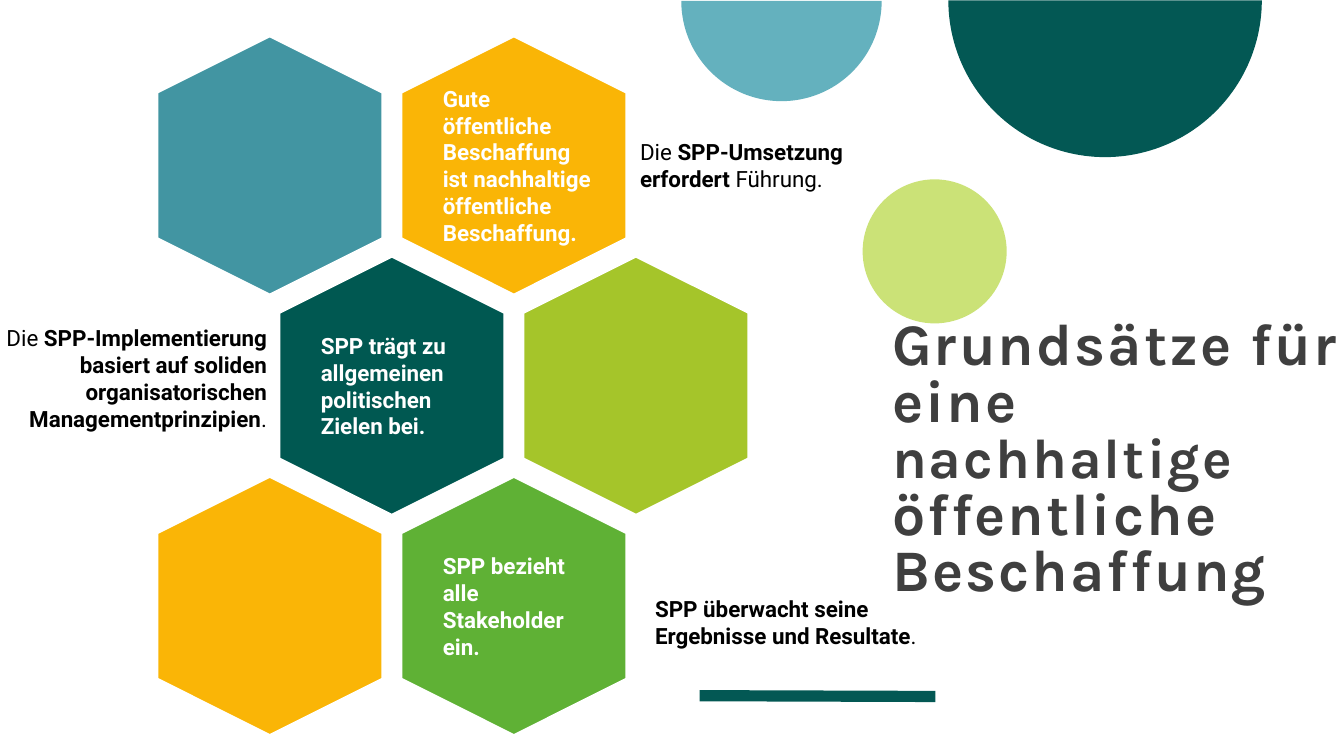
import pptx
import pptx.util
import pptx.dml.color
import pptx.enum.shapes
import pptx.enum.text
import pptx.oxml
from dataclasses import dataclass
from pptx.util import Cm

SHAPE = pptx.enum.shapes.MSO_SHAPE
ALIGN = pptx.enum.text.PP_ALIGN
ANCHOR = pptx.enum.text.MSO_ANCHOR


@dataclass(frozen=True)
class Theme:
    heading_font: str = "Karla"
    body_font: str = "Roboto"
    title_size: int = 42
    title_small_size: int = 40
    title_tracking: int = 150  # hundredths of a point
    body_size: int = 16
    white: str = "FFFFFF"
    black: str = "000000"
    grey: str = "3F3F3F"
    petrol: str = "035854"
    dark_green: str = "005851"
    blue: str = "4295A2"
    light_blue: str = "64B1BE"
    yellow: str = "FAB506"
    lime: str = "A5C52A"
    pale_lime: str = "CBE277"
    green: str = "5FB135"


def rgb(value):
    return pptx.dml.color.RGBColor.from_string(value)


class SlideBuilder:
    def __init__(self, slide, theme):
        self.slide = slide
        self.theme = theme

    def shape(self, kind, left, top, width, height, fill, outline=None):
        drawn = self.slide.shapes.add_shape(
            kind, Cm(left), Cm(top), Cm(width), Cm(height))
        drawn.shadow.inherit = False
        drawn.fill.solid()
        drawn.fill.fore_color.rgb = rgb(fill)
        if outline:
            drawn.line.color.rgb = rgb(outline)
            drawn.line.width = pptx.util.Pt(2)
        else:
            drawn.line.fill.background()
        return drawn

    def half_disc(self, left, top, diameter, fill):
        """Lower half of a circle."""
        disc = self.shape(SHAPE.PIE, left, top, diameter, diameter, fill)
        disc.adjustments[0] = 0
        disc.adjustments[1] = 108

    def hexagon(self, center_x, center_y, fill):
        """Hexagon standing on a corner."""
        length, breadth = 6.53, 5.69
        cell = self.shape(SHAPE.HEXAGON, center_x - length / 2, center_y - breadth / 2,
                          length, breadth, fill, self.theme.white)
        cell.adjustments[0] = 0.25
        cell.rotation = 90

    def rule(self, x1, y1, x2, y2, color):
        bar = self.slide.shapes.add_connector(
            pptx.enum.shapes.MSO_CONNECTOR.STRAIGHT, Cm(x1), Cm(y1), Cm(x2), Cm(y2))
        bar.line.color.rgb = rgb(color)
        bar.line.width = pptx.util.Pt(8)
        bar._element.spPr.append(pptx.oxml.parse_xml(
            '<a:effectLst xmlns:a="http://schemas.openxmlformats.org/drawingml/2006/main"/>'))

    def label(self, left, top, width, height, parts, color, align=ALIGN.LEFT):
        """Text box; parts are (text, bold) pairs."""
        frame = self.slide.shapes.add_textbox(
            Cm(left), Cm(top), Cm(width), Cm(height)).text_frame
        frame.word_wrap = True
        frame.vertical_anchor = ANCHOR.MIDDLE
        frame.margin_left = frame.margin_right = Cm(0.18)
        frame.margin_top = frame.margin_bottom = Cm(0.18)
        paragraph = frame.paragraphs[0]
        paragraph.alignment = align
        paragraph.font.name = self.theme.body_font
        paragraph.font.size = pptx.util.Pt(self.theme.body_size)
        paragraph.font.color.rgb = rgb(color)
        for text, bold in parts:
            run = paragraph.add_run()
            run.text = text
            run.font.bold = bold

    def title(self, left, top, width, height, parts):
        """Title placeholder; parts are (text, size) pairs."""
        heading = self.slide.shapes.title
        heading.left, heading.top = Cm(left), Cm(top)
        heading.width, heading.height = Cm(width), Cm(height)
        frame = heading.text_frame
        frame.word_wrap = True
        frame.auto_size = pptx.enum.text.MSO_AUTO_SIZE.NONE
        frame.vertical_anchor = ANCHOR.BOTTOM
        frame.margin_left = frame.margin_right = 0
        frame.margin_top = frame.margin_bottom = 0
        paragraph = frame.paragraphs[0]
        paragraph.alignment = ALIGN.LEFT
        paragraph.line_spacing = 0.8
        paragraph.font.name = self.theme.heading_font
        paragraph.font.bold = True
        paragraph.font.color.rgb = rgb(self.theme.grey)
        for text, size in parts:
            run = paragraph.add_run()
            run.text = text
            run.font.size = pptx.util.Pt(size)
            run.font._element.set("spc", str(self.theme.title_tracking))


def main():
    deck = pptx.Presentation()
    deck.slide_width, deck.slide_height = Cm(33.87), Cm(19.05)
    theme = Theme()
    builder = SlideBuilder(deck.slides.add_slide(deck.slide_layouts[5]), theme)

    builder.rule(17.63, 17.53, 23.57, 17.55, theme.petrol)
    builder.half_disc(23.9, -3.94, 7.9, theme.petrol)
    builder.half_disc(17.17, -2.5, 5.05, theme.light_blue)
    builder.shape(SHAPE.OVAL, 21.74, 4.52, 3.63, 3.63, theme.pale_lime)
    builder.title(22.48, 7.37, 11.4, 7.82, [
        ("Grundsätze für eine ", theme.title_size),
        ("nachhaltige", theme.title_small_size),
        (" öffentliche Beschaffung", theme.title_size)])

    # Honeycomb: the middle row is shifted by half a column
    first_x, first_y, column_step, row_step = 6.8, 4.17, 6.15, 5.55
    honeycomb = [
        [(theme.blue, None),
         (theme.yellow,
          "Gute öffentliche Beschaffung ist nachhaltige öffentliche Beschaffung.")],
        [(theme.dark_green, "SPP trägt zu allgemeinen politischen Zielen bei."),
         (theme.lime, None)],
        [(theme.yellow, None),
         (theme.green, "SPP bezieht alle Stakeholder ein.")]]
    for row, cells in enumerate(honeycomb):
        for column, (fill, principle) in enumerate(cells):
            x = first_x + (column + row % 2 / 2) * column_step
            y = first_y + row * row_step
            builder.hexagon(x, y, fill)
            if principle:
                width = 4.27 if row == 0 else 3.91
                builder.label(x - 1.97, y - 2.25, width, 4.5,
                              [(principle, True)], theme.white)

    side_notes = [
        (15.95, 2.21, 7.29, ALIGN.LEFT,
         [("Die ", False), ("SPP-Umsetzung erfordert", True), (" Führung.", False)]),
        (-0.15, 7.57, 7.06, ALIGN.RIGHT,
         [("Die ", False),
          ("SPP-Implementierung basiert auf soliden organisatorischen "
           "Managementprinzipien", True),
          (".", False)]),
        (16.33, 13.72, 7.29, ALIGN.LEFT,
         [("SPP überwacht seine Ergebnisse und Resultate", True), (".", False)])]
    for left, top, width, align, parts in side_notes:
        builder.label(left, top, width, 3.91, parts, theme.black, align)

    deck.save("out.pptx")


if __name__ == "__main__":
    main()
